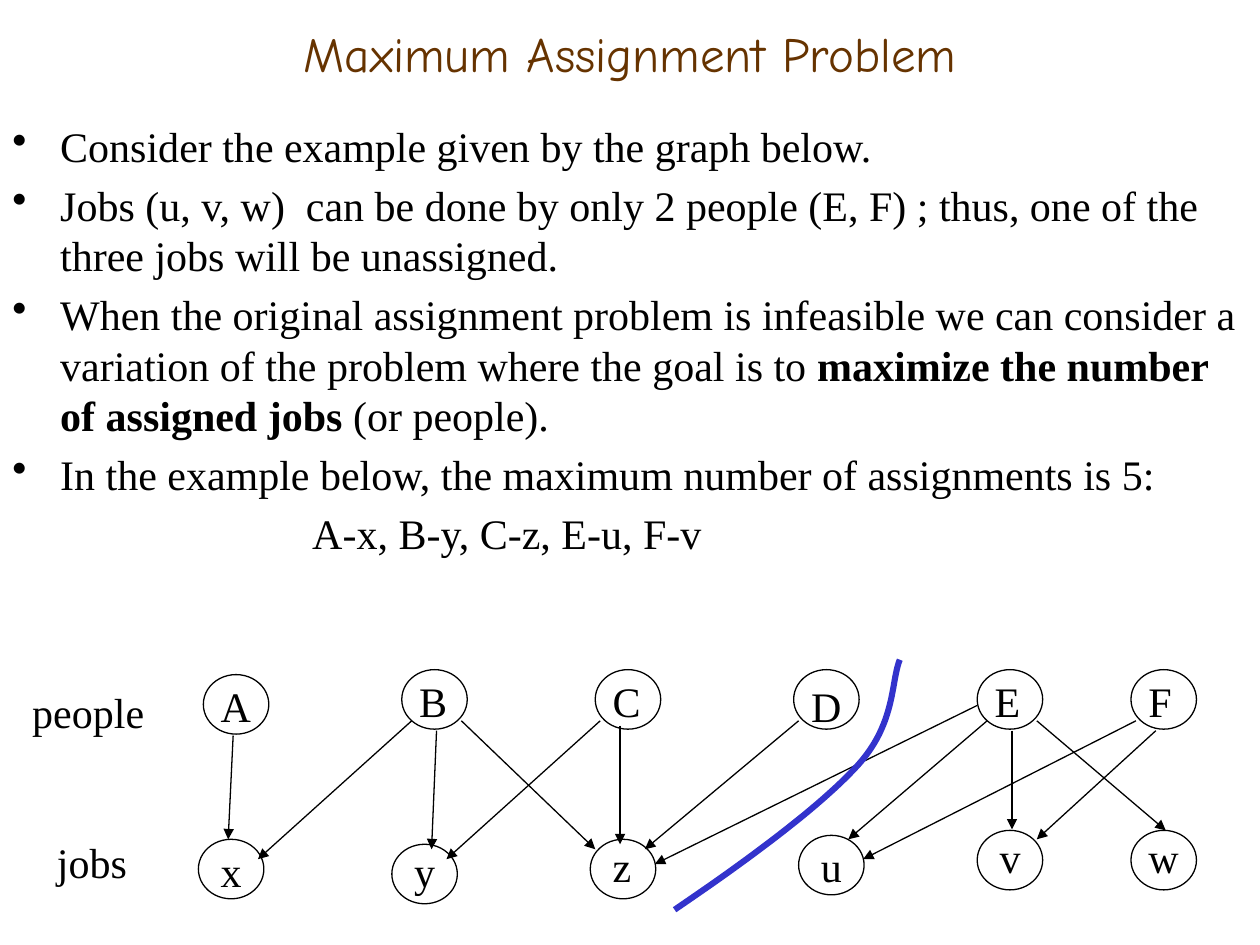
from dataclasses import dataclass

from lxml.etree import SubElement
from pptx import Presentation
from pptx.dml.color import RGBColor
from pptx.enum.shapes import MSO_CONNECTOR, MSO_SHAPE
from pptx.enum.text import MSO_ANCHOR, PP_ALIGN
from pptx.oxml.ns import qn
from pptx.util import Inches, Mm, Pt


@dataclass(frozen=True)
class Theme:
    ink: RGBColor = RGBColor(0, 0, 0)
    paper: RGBColor = RGBColor(255, 255, 255)
    brown: RGBColor = RGBColor(0x66, 0x33, 0)
    blue: RGBColor = RGBColor(0x33, 0x33, 0xCC)
    head: str = "Comic Neue"
    font: str = "Times New Roman"
    big: float = 28
    size: float = 24
    thin: float = 0.75
    thick: float = 3.5


@dataclass(frozen=True)
class Box:
    """A region in grid cells; one cell is one millimetre."""
    left: float
    top: float
    wide: float
    high: float

    def x(self, col):
        return Mm(self.left + col)

    def y(self, row):
        return Mm(self.top + row)


look = Theme()
WIDE = 254
NODE = (13.2, 12)
LABEL = 12.7

POINTS = [
    ("Consider the example given by the graph below.",),
    ("Jobs (u, v, w)  can be done by only 2 people (E, F) ; "
     "thus, one of the three jobs will be unassigned.",),
    ("When the original assignment problem is infeasible we can consider a "
     "variation of the problem where the goal is to ",
     "maximize the number of assigned jobs", " (or people)."),
    ("In the example below, the maximum number of assignments is 5:",),
]
ANSWER = "A-x, B-y, C-z, E-u, F-v"

# name, node column and row, label column and row
PEOPLE = [
    ("A", 41, 3, 42, 3), ("B", 81, 2, 82, 2), ("C", 120, 2, 121, 2),
    ("D", 160, 2, 161, 3), ("E", 197, 2, 198, 2), ("F", 228, 2, 229, 2),
]
JOBS = [
    ("x", 40, 36.2, 42, 36.2), ("y", 79, 37.2, 81, 36.2),
    ("z", 119, 36.2, 121, 35.2), ("u", 161, 35.4, 163, 35.2),
    ("v", 197, 34.4, 199, 33.4), ("w", 228, 34.4, 229, 33.4),
]
# text, column, row, width
SIDES = [("people", 4, 4.2, 34), ("jobs", 9, 34.4, 22)]

# arrows from a person to a job: start column, row, end column, row
EDGES = [
    (47, 15.3, 46, 36.2),     # A-x
    (83, 12.3, 52, 40.2),     # B-x
    (88, 14.3, 87, 38.2),     # B-y
    (93, 12.3, 120, 38.2),    # B-z
    (121, 12.3, 90, 40.2),    # C-y
    (125, 13.3, 125, 37.2),   # C-z
    (161, 12.3, 130, 38.2),   # D-z
    (197, 9.2, 132, 41.2),    # E-z
    (199, 12.3, 171, 36.2),   # E-u
    (204, 14.3, 204, 34.2),   # E-v
    (209, 12.3, 235, 34.4),   # E-w
    (229, 12.3, 174, 40.2),   # F-u
    (233, 14.3, 209, 36.2),   # F-v
]
# two Bezier arcs that share their middle point
ARCS = [
    ((136, 50.4), (150.6, 40.5), (165.4, 29.6), (173, 21.2)),
    ((173, 21.2), (180.6, 12.8), (179.6, 4.4), (181.4, 0)),
]


def write(para, text, font=look.font, size=look.size, color=look.ink,
          bold=False):
    run = para.add_run()
    run.text = text
    run.font.name, run.font.size, run.font.bold = font, Pt(size), bold
    run.font.color.rgb = color


def frame(slide, box, col=0, row=0, wide=None, high=None):
    area = slide.shapes.add_textbox(
        box.x(col), box.y(row), Mm(wide or box.wide), Mm(high or box.high))
    area.text_frame.word_wrap = True
    return area.text_frame


def indent(para, left, first, mark=None):
    props = para._p.get_or_add_pPr()
    props.set("marL", str(Inches(left)))
    props.set("indent", str(Inches(first)))
    space = SubElement(SubElement(props, qn("a:spcBef")), qn("a:spcPct"))
    space.set("val", "20000")
    if mark:
        SubElement(props, qn("a:buChar")).set("char", mark)


def title(slide, box):
    text = frame(slide, box)
    text.vertical_anchor = MSO_ANCHOR.MIDDLE
    para = text.paragraphs[0]
    para.alignment = PP_ALIGN.CENTER
    write(para, "Maximum Assignment Problem", look.head, look.big, look.brown)


def body(slide, box):
    text = frame(slide, box)
    for spot, parts in enumerate(POINTS):
        para = text.add_paragraph() if spot else text.paragraphs[0]
        indent(para, 0.38, -0.38, "•")
        for turn, part in enumerate(parts):
            write(para, part, bold=turn == 1)
    para = text.add_paragraph()
    indent(para, 2.38, 0)
    write(para, ANSWER)


def node(slide, box, col, row):
    oval = slide.shapes.add_shape(
        MSO_SHAPE.OVAL, box.x(col), box.y(row), *map(Mm, NODE))
    oval.shadow.inherit = False
    oval.fill.solid()
    oval.fill.fore_color.rgb = look.paper
    oval.line.color.rgb = look.ink
    oval.line.width = Pt(look.thin)


def arrow(slide, box, col, row, to_col, to_row):
    line = slide.shapes.add_connector(
        MSO_CONNECTOR.STRAIGHT, box.x(col), box.y(row),
        box.x(to_col), box.y(to_row))
    line.line.color.rgb = look.ink
    line.line.width = Pt(look.thin)
    SubElement(line.line._get_or_add_ln(),
               qn("a:tailEnd")).set("type", "triangle")
    SubElement(line._element.spPr, qn("a:effectLst"))


def bend(arc, part):
    """Point of a cubic Bezier arc at a share of its run."""
    rest = 1 - part
    shares = (rest ** 3, 3 * rest ** 2 * part, 3 * rest * part ** 2, part ** 3)
    return [sum(s * p[axis] for s, p in zip(shares, arc)) for axis in (0, 1)]


def divide(slide, box, steps=24):
    spots = [bend(arc, step / steps)
             for arc in ARCS for step in range(steps + 1)]
    (col, row), *rest = [(box.x(c), box.y(r)) for c, r in spots]
    pen = slide.shapes.build_freeform(col, row)
    pen.add_line_segments(rest, close=False)
    curve = pen.convert_to_shape()
    curve.shadow.inherit = False
    curve.fill.background()
    curve.line.color.rgb = look.blue
    curve.line.width = Pt(look.thick)


def graph(slide, box):
    nodes = PEOPLE + JOBS
    for _, col, row, _, _ in nodes:
        node(slide, box, col, row)
    for edge in EDGES:
        arrow(slide, box, *edge)
    # Node names and row names
    names = [(name, col, row, 12 if name == "w" else 10)
             for name, _, _, col, row in nodes]
    for name, col, row, wide in names + SIDES:
        write(frame(slide, box, col, row, wide, LABEL).paragraphs[0], name)
    # Line between the two groups
    divide(slide, box)


def main():
    deck = Presentation()
    deck.slide_width, deck.slide_height = Inches(10), Inches(7.5)
    slide = deck.slides.add_slide(deck.slide_layouts[6])
    title(slide, Box(0, 0, WIDE, 21.3))
    body(slide, Box(0, 23.1, WIDE, 167.4))
    graph(slide, Box(0, 133, WIDE, 50.4))
    deck.save("out.pptx")


if __name__ == "__main__":
    main()
